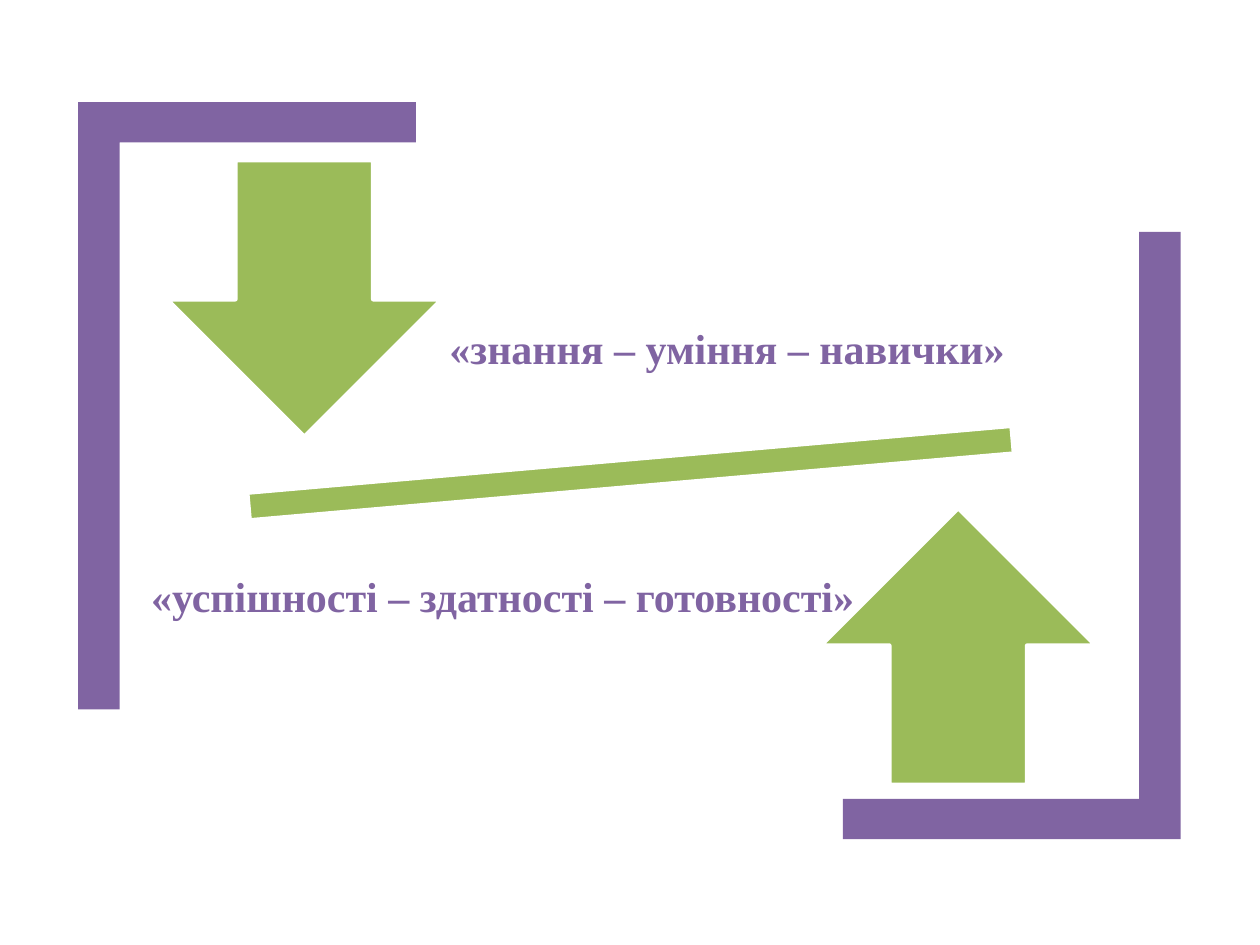
from pptx import Presentation
from pptx.dml.color import RGBColor
from pptx.enum.shapes import MSO_SHAPE
from pptx.enum.text import MSO_ANCHOR, PP_ALIGN
from pptx.util import Inches, Pt

DOWN, UP, MINUS = MSO_SHAPE.DOWN_ARROW, MSO_SHAPE.UP_ARROW, MSO_SHAPE.MATH_MINUS
MIDDLE, CENTER = MSO_ANCHOR.MIDDLE, PP_ALIGN.CENTER
COLUMNS, ROWS = 100, 75
CELL = Inches(0.1)
PURPLE, GREEN, WHITE = "8064A2", "9BBB59", "FFFFFF"
BRACKET = [(0, 0), (26.8, 0), (26.8, 3.2), (3.3, 3.2), (3.3, 48.2), (0, 48.2)]
ARROW_SIZE = (21.9, 22)


def grid(*cells):
    """Turn grid cells into slide lengths."""
    return [round(cell * CELL) for cell in cells]


def color(hex_code):
    """Turn a hex string into a colour."""
    return RGBColor.from_string(hex_code)


def apply(target, values):
    """Set each named attribute of the target."""
    for name, value in values.items():
        setattr(target, name, value)


def paint(shape, fill):
    """Give the shape a flat fill and no shadow."""
    shape.shadow.inherit = False
    shape.fill.solid()
    shape.fill.fore_color.rgb = color(fill)


def add_bracket(page, column, row, direction):
    """Draw a corner bracket that opens to the right (1) or the left (-1)."""
    points = [grid(column + direction * x, row + direction * y) for x, y in BRACKET]
    builder = page.shapes.build_freeform(*points[0])
    builder.add_line_segments(points[1:], close=True)
    bracket = builder.convert_to_shape()
    paint(bracket, PURPLE)
    bracket.line.fill.background()


def add_sign(page, kind, column, row, width, height, rotation=0):
    """Draw a green preset shape with a white outline."""
    sign = page.shapes.add_shape(kind, *grid(column, row, width, height))
    sign.rotation = rotation
    paint(sign, GREEN)
    sign.line.color.rgb = color(WHITE)
    sign.line.width = Pt(2.75)


def add_label(page, text, column, row, width, height):
    """Write a bold purple line centred in its box."""
    frame = page.shapes.add_textbox(*grid(column, row, width, height)).text_frame
    sides = ("left", "top", "right", "bottom")
    apply(frame, {f"margin_{side}": Inches(0.19) for side in sides})
    apply(frame, {"word_wrap": True, "vertical_anchor": MIDDLE})
    para = frame.paragraphs[0]
    apply(para, {"alignment": CENTER, "line_spacing": 0.9})
    span = para.add_run()
    span.text = text
    apply(span.font, {"name": "Times New Roman", "size": Pt(24), "bold": True})
    span.font.color.rgb = color(PURPLE)


def main():
    """Build the slide and save it."""
    deck = Presentation()
    deck.slide_width, deck.slide_height = grid(COLUMNS, ROWS)
    page = deck.slides.add_slide(deck.slide_layouts[6])
    add_bracket(page, 93.7, 66.6, -1)
    add_bracket(page, 6.2, 8.1, 1)
    add_sign(page, MINUS, 8.6, 32.8, 82.9, 9.5, rotation=355)
    add_sign(page, DOWN, 13.2, 12.7, *ARROW_SIZE)
    add_label(page, "«знання – уміння – навички»", 30.8, 21.3, 53.8, 13.1)
    add_sign(page, UP, 65.1, 40.3, *ARROW_SIZE)
    add_label(page, "«успішності – здатності – готовності»", 9.9, 41, 60, 13.1)
    deck.save("out.pptx")


if __name__ == "__main__":
    main()
